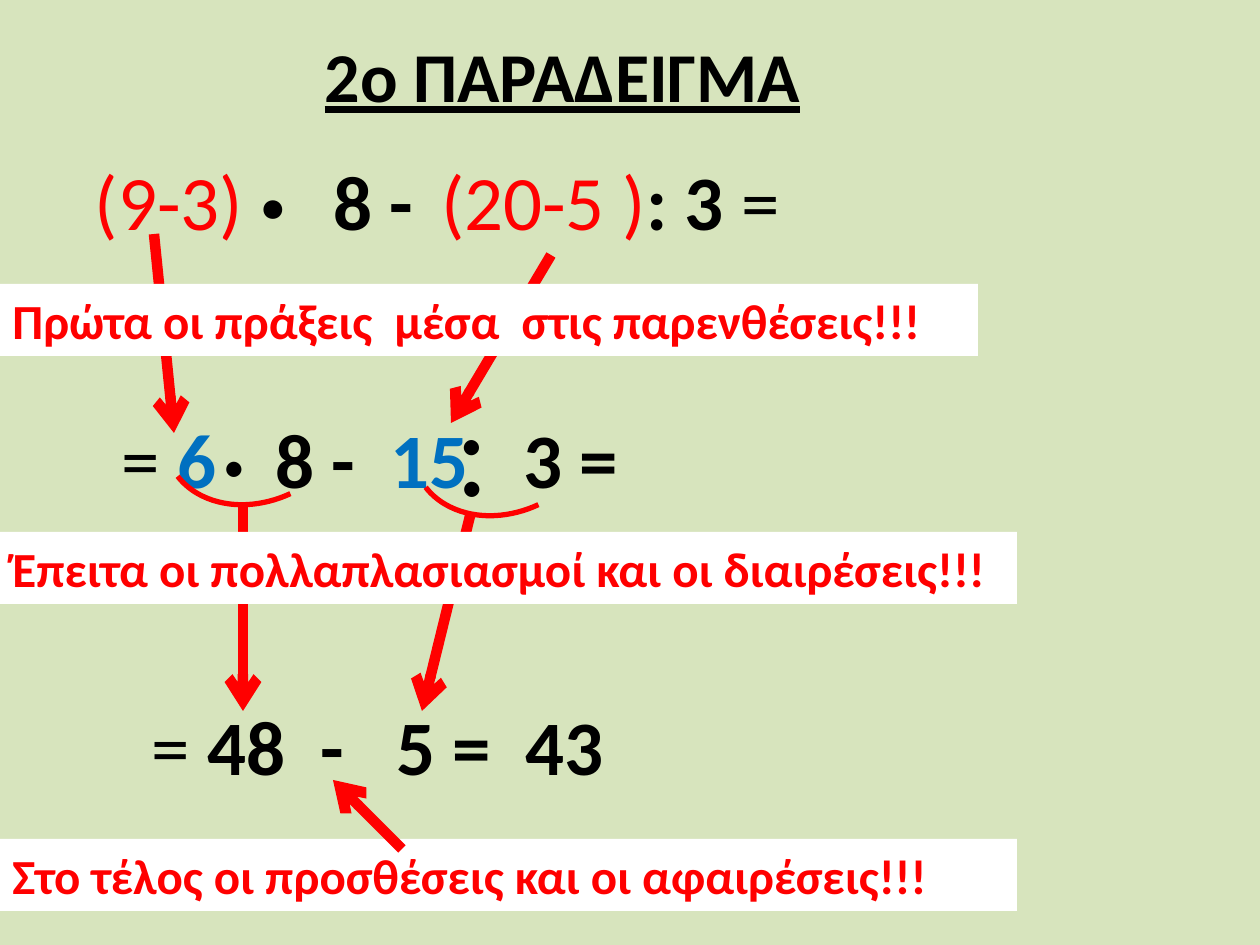
from dataclasses import dataclass

from lxml import etree
from pptx import Presentation
from pptx.dml.color import RGBColor
from pptx.enum.shapes import MSO_CONNECTOR, MSO_SHAPE
from pptx.enum.text import MSO_ANCHOR, MSO_AUTO_SIZE, PP_ALIGN
from pptx.oxml.ns import qn
from pptx.util import Emu, Pt

STRAIGHT = MSO_CONNECTOR.STRAIGHT
ARC = MSO_SHAPE.ARC
TOP, MIDDLE = MSO_ANCHOR.TOP, MSO_ANCHOR.MIDDLE
LEFT, CENTER = PP_ALIGN.LEFT, PP_ALIGN.CENTER
NO_AUTOFIT = MSO_AUTO_SIZE.NONE
TITLE_ONLY = 5
EMU_PER_PX = 914400 / 126


@dataclass(frozen=True)
class Theme:
    font: str = "Calibri"
    background: str = "D7E4BD"
    ink: str = "000000"
    accent: str = "FF0000"
    result: str = "0070C0"
    paper: str = "FFFFFF"
    heading: int = 40
    formula: int = 44
    operator: int = 72
    rule: int = 28
    arrow_width: int = 6
    arc_width: int = 3


THEME = Theme()


@dataclass(frozen=True)
class Span:
    text: str
    color: str = THEME.ink
    bold: bool = False


@dataclass(frozen=True)
class Term:
    left: int
    top: int
    width: int
    spans: tuple[Span, ...]
    size: int = THEME.formula
    height: int = 208


@dataclass(frozen=True)
class Rule:
    top: int
    width: int
    text: str


@dataclass(frozen=True)
class Arrow:
    start: tuple[int, int]
    end: tuple[int, int]


def px(length: int) -> Emu:
    return Emu(round(length * EMU_PER_PX))


def rgb(color: str) -> RGBColor:
    return RGBColor.from_string(color)


def write(box, *spans: Span, size: int, align=LEFT, anchor=TOP, underline=False) -> None:
    frame = box.text_frame
    frame.word_wrap = True
    frame.auto_size = NO_AUTOFIT
    frame.vertical_anchor = anchor
    para = frame.paragraphs[0]
    para.alignment = align
    for span in spans:
        run = para.add_run()
        run.text = span.text
        font = run.font
        font.name, font.size = THEME.font, Pt(size)
        font.bold, font.underline = span.bold, underline
        font.color.rgb = rgb(span.color)


def draw_heading(page, text: str) -> None:
    title = page.shapes.title
    title.left, title.top, title.width, title.height = map(px, (312, 26, 507, 97))
    write(title, Span(text, bold=True), size=THEME.heading, underline=True)


def draw_term(page, term: Term) -> None:
    box = page.shapes.add_textbox(*map(px, (term.left, term.top, term.width, term.height)))
    write(box, *term.spans, size=term.size, align=CENTER, anchor=MIDDLE)


def draw_rule(page, rule: Rule) -> None:
    box = page.shapes.add_textbox(*map(px, (0, rule.top, rule.width, 72)))
    box.fill.solid()
    box.fill.fore_color.rgb = rgb(THEME.paper)
    write(box, Span(rule.text, THEME.accent, True), size=THEME.rule)


def draw_arrow(page, arrow: Arrow) -> None:
    line = page.shapes.add_connector(STRAIGHT, *map(px, arrow.start + arrow.end))
    line.line.color.rgb = rgb(THEME.accent)
    line.line.width = Pt(THEME.arrow_width)
    etree.SubElement(line.line._get_or_add_ln(), qn("a:tailEnd"), type="arrow")
    etree.SubElement(line._element.spPr, qn("a:effectLst"))


def draw_arc(page, left: int, top: int) -> None:
    arc = page.shapes.add_shape(ARC, *map(px, (left, top, 198, 159)))
    arc.adjustments[0], arc.adjustments[1] = 164.91, 212.19
    arc.rotation = 151.9
    arc.shadow.inherit = False
    arc.fill.background()
    arc.line.color.rgb = rgb(THEME.accent)
    arc.line.width = Pt(THEME.arc_width)


FIRST, SECOND, THIRD = 96, 354, 641  # tops of the three calculation rows
TERMS = (
    # (9-3) . 8 - (20-5) : 3
    Term(213, FIRST, 338, (Span("8 - ", bold=True),)),
    Term(223, FIRST - 20, 129, (Span(". ", bold=True),), THEME.operator, 185),
    Term(0, FIRST, 338, (Span("(9-3)", THEME.accent),)),
    Term(422, FIRST, 377, (Span("(20-5 )", THEME.accent), Span(": 3 ", bold=True), Span("="))),
    # 6 . 8 - 15 : 3
    Term(0, SECOND, 338, (Span("= "), Span("6", THEME.result, True))),
    Term(402, SECOND, 338, (Span("3 =", bold=True),)),
    Term(184, SECOND - 20, 129, (Span(". "),), THEME.operator, 185),
    Term(422, SECOND, 129, (Span(": "),), THEME.operator, 185),
    Term(194, SECOND, 338, (Span(" 8 -  ", bold=True), Span("15", THEME.result, True))),
    # 48 - 5
    Term(123, THIRD, 510, (Span("= "), Span("48  -   5 =  43", bold=True))),
)
STEP_ARROWS = (
    Arrow((154, 234), (174, 433)),
    Arrow((551, 255), (451, 423)),
    Arrow((243, 503), (243, 711)),
    Arrow((471, 512), (422, 711)),
)
FINAL_ARROW = Arrow((402, 849), (333, 780))
RULES = (
    Rule(284, 978, "Πρώτα οι πράξεις  μέσα  στις παρενθέσεις!!!"),
    Rule(532, 1017, "Έπειτα οι πολλαπλασιασμοί και οι διαιρέσεις!!!"),
    Rule(839, 1017, "Στο τέλος οι προσθέσεις και οι αφαιρέσεις!!!"),
)
ARCS = ((408, 352), (160, 341))


def main() -> None:
    deck = Presentation()
    deck.slide_width, deck.slide_height = px(1260), px(945)
    page = deck.slides.add_slide(deck.slide_layouts[TITLE_ONLY])
    page.background.fill.solid()
    page.background.fill.fore_color.rgb = rgb(THEME.background)

    # Heading and calculation
    draw_heading(page, "2o ΠΑΡΑΔΕΙΓΜΑ")
    for term in TERMS:
        draw_term(page, term)

    # Rules lie over the step arrows, under the final arrow
    for arrow in STEP_ARROWS:
        draw_arrow(page, arrow)
    for rule in RULES:
        draw_rule(page, rule)
    draw_arrow(page, FINAL_ARROW)

    # Arcs joining the factors of each operation
    for left, top in ARCS:
        draw_arc(page, left, top)

    deck.save("out.pptx")


if __name__ == "__main__":
    main()
